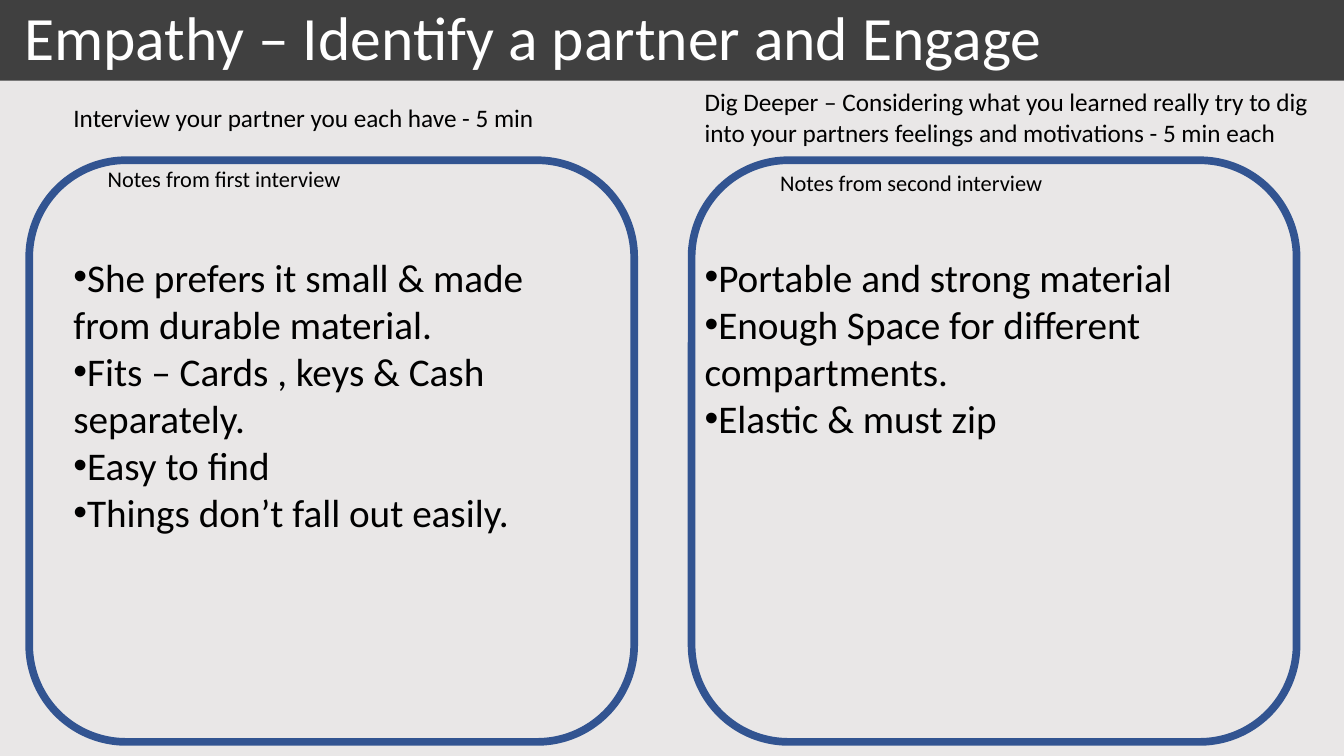
from dataclasses import dataclass

from lxml import etree
from pptx import Presentation
from pptx.dml.color import RGBColor
from pptx.enum import shapes, text
from pptx.oxml.ns import qn
from pptx.util import Inches, Pt


@dataclass(frozen=True)
class Theme:
    font: str = "Calibri"
    background: RGBColor = RGBColor(0xE9, 0xE7, 0xE7)
    bar: RGBColor = RGBColor(0x40, 0x40, 0x40)
    frame: RGBColor = RGBColor(0x32, 0x54, 0x91)
    ink: RGBColor = RGBColor(0, 0, 0)
    title_ink: RGBColor = RGBColor(0xFF, 0xFF, 0xFF)
    title_size: int = 44
    prompt_size: int = 18
    label_size: int = 16
    finding_size: int = 28
    frame_width: float = 5.5


THEME = Theme()
SLIDE_WIDTH, SLIDE_HEIGHT = 13.33, 7.5

# Each frame is left, top, width, height; offsets run from its top left corner.
INTERVIEWS = [
    dict(
        frame=(0.29, 1.59, 6, 5.77),
        prompt="Interview your partner you each have - 5 min",
        prompt_box=(0.34, -0.62, 5.81, 0.4),
        label="Notes from first interview",
        label_box=(0.68, 0, 3.38, 0.37),
        findings=[
            "She prefers it small & made from durable material.",
            "Fits – Cards , keys & Cash separately.",
            "Easy to find",
            "Things don’t fall out easily.",
        ],
        findings_box=(0.34, 0.87, 5.38, 2.93),
    ),
    dict(
        frame=(6.86, 1.59, 6, 5.77),
        prompt="Dig Deeper – Considering what you learned really try to dig "
               "into your partners feelings and motivations - 5 min each",
        prompt_box=(0.03, -0.78, 6.28, 0.71),
        label="Notes from second interview",
        label_box=(0.78, 0.04, 3.38, 0.37),
        findings=[
            "Portable and strong material",
            "Enough Space for different compartments.",
            "Elastic & must zip",
        ],
        findings_box=(0.03, 0.87, 5.68, 2.39),
    ),
]


def set_font(paragraph, size, color):
    paragraph.font.name = THEME.font
    paragraph.font.size = Pt(size)
    paragraph.font.color.rgb = color


def add_bullet(paragraph):
    """Put a bullet directly before the text, with no hanging indent."""
    properties = paragraph._p.get_or_add_pPr()
    properties.set("marL", "0")
    properties.set("indent", "0")
    bullet_font = etree.Element(qn("a:buFont"), typeface="Arial")
    bullet = etree.Element(qn("a:buChar"), char="•")
    properties[:0] = [bullet_font, bullet]  # bullets precede the run defaults


def add_text(slide, box, lines, size, bulleted=False):
    frame = slide.shapes.add_textbox(*map(Inches, box)).text_frame
    frame.word_wrap = True
    frame.auto_size = text.MSO_AUTO_SIZE.SHAPE_TO_FIT_TEXT
    frame.text = "\n".join(lines)
    for paragraph in frame.paragraphs:
        set_font(paragraph, size, THEME.ink)
        if bulleted:
            add_bullet(paragraph)


def add_title_bar(slide, box, wording):
    left, top, width, height = map(Inches, box)
    bar = slide.shapes.add_shape(
        shapes.MSO_SHAPE.RECTANGLE, left, top, width, height)
    bar.shadow.inherit = False
    bar.fill.solid()
    bar.fill.fore_color.rgb = THEME.bar
    bar.line.fill.background()

    title = slide.shapes.title
    title.left, title.top, title.width, title.height = left, top, width, height
    bar._element.addnext(title._element)  # the title lies in front of its bar
    frame = title.text_frame
    frame.text = wording
    frame.word_wrap = True
    frame.auto_size = text.MSO_AUTO_SIZE.NONE
    frame.vertical_anchor = text.MSO_ANCHOR.MIDDLE
    frame.margin_left = Inches(0.24)
    heading = frame.paragraphs[0]
    heading.alignment = text.PP_ALIGN.LEFT
    heading.line_spacing = 0.9
    set_font(heading, THEME.title_size, THEME.title_ink)


def add_interview(slide, interview):
    """Draw a rounded frame with its prompt above and its findings inside."""
    left, top, width, height = interview["frame"]
    outline = slide.shapes.add_shape(
        shapes.MSO_SHAPE.ROUNDED_RECTANGLE,
        *map(Inches, (left, top, width, height)))
    outline.shadow.inherit = False
    outline.fill.background()
    outline.line.color.rgb = THEME.frame
    outline.line.width = Pt(THEME.frame_width)

    def place(offset_box):
        x, y, w, h = offset_box
        return left + x, top + y, w, h

    add_text(slide, place(interview["prompt_box"]), [interview["prompt"]],
             THEME.prompt_size)
    add_text(slide, place(interview["label_box"]), [interview["label"]],
             THEME.label_size)
    add_text(slide, place(interview["findings_box"]), interview["findings"],
             THEME.finding_size, bulleted=True)


def main():
    deck = Presentation()
    deck.slide_width = Inches(SLIDE_WIDTH)
    deck.slide_height = Inches(SLIDE_HEIGHT)
    slide = deck.slides.add_slide(deck.slide_layouts.get_by_name("Title Only"))
    slide.background.fill.solid()
    slide.background.fill.fore_color.rgb = THEME.background

    add_title_bar(slide, (0, 0, SLIDE_WIDTH, 0.8),
                  "Empathy – Identify a partner and Engage")
    for interview in INTERVIEWS:
        add_interview(slide, interview)
    deck.save("out.pptx")


if __name__ == "__main__":
    main()
